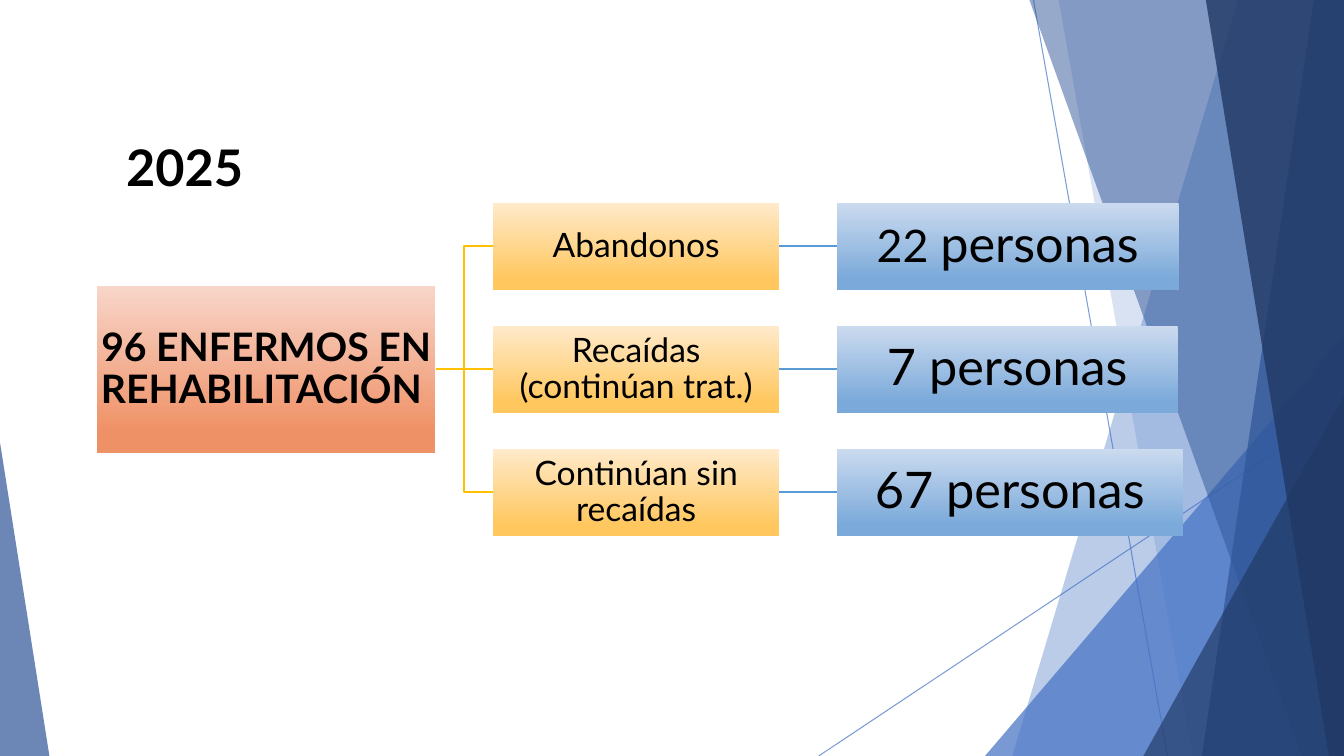
import pptx
import pptx.dml.color
import pptx.enum.dml
import pptx.enum.shapes
import pptx.enum.text
import pptx.oxml
import pptx.oxml.ns
import pptx.util

Inches = pptx.util.Inches
Pt = pptx.util.Pt
SHAPES = pptx.enum.shapes.MSO_SHAPE
FONT = "Lato"
WIDTH, HEIGHT = 13.33, 7.5

TITLE = "2025"
TOTAL = "96 ENFERMOS EN REHABILITACIÓN "
# Outcome, text runs of the count with their sizes, width of the count box
OUTCOMES = [
    ("Abandonos", [("22 ", 32), ("personas", 36)], 3.39),
    ("Recaídas (continúan trat.)", [("7 personas", 36)], 3.38),
    ("Continúan sin recaídas", [("67 personas", 36)], 3.43),
]

ORANGE = ("F8D5C9", "EF9166")
YELLOW = ("FFEACB", "FFC75E")
BLUE = ("CCDBEF", "7AA9DA")
BRANCH_LINE, COUNT_LINE = "FFC000", "5B9BD5"

# Rays: start, end
RAYS = [((10.25, 0), (11.58, HEIGHT)), ((WIDTH, 4.03), (8.12, HEIGHT))]
# Bands reaching the right edge: top left x, bottom left x, colour, opacity
# Triangles: left, top, width, height, apex, colour, opacity
DECORATION = [
    ("band", (12.28, 10.04), "4472C4", 36),
    ("band", (10.5, 11.83), "4472C4", 20),
    ("triangle", (9.77, 3.33, 3.56, 4.17, 1), "4472C4", 72),
    ("band", (10.21, 12.91), "2F5597", 50),
    ("band", (13.03, 11.92), "2F5597", 70),
    ("band", (11.96, 13.18), "203864", 80),
    ("triangle", (11.34, 3.93, 1.99, 3.57, 1), "203864", 66),
    ("triangle", (0, 4.39, 0.49, 3.11, 0), "2F5597", 70),
]

TOTAL_LEFT, TOTAL_TOP, TOTAL_WIDTH, TOTAL_HEIGHT = 0.96, 2.84, 3.36, 1.65
OUTCOME_WIDTH, ROW_HEIGHT = 2.84, 0.87
GAP = 0.57
TOTAL_RIGHT = TOTAL_LEFT + TOTAL_WIDTH
OUTCOME_LEFT = TOTAL_RIGHT + GAP
OUTCOME_RIGHT = OUTCOME_LEFT + OUTCOME_WIDTH
COUNT_LEFT = OUTCOME_RIGHT + GAP
CENTRE = TOTAL_TOP + TOTAL_HEIGHT / 2
ROW_PITCH = 1.22


def colour(hex_string):
    return pptx.dml.color.RGBColor.from_string(hex_string)


def set_opacity(fill_format, percent):
    for node in fill_format.iter(pptx.oxml.ns.qn("a:srgbClr")):
        alpha = pptx.oxml.parse_xml(
            f'<a:alpha {pptx.oxml.ns.nsdecls("a")} val="{percent * 1000}"/>')
        node.append(alpha)


def add_line(slide, start, end, line_colour, width):
    line = slide.shapes.add_connector(
        pptx.enum.shapes.MSO_CONNECTOR.STRAIGHT,
        *(Inches(value) for value in (*start, *end)))
    line.line.color.rgb = colour(line_colour)
    line.line.width = Pt(width)
    properties = line._element.spPr
    properties.append(pptx.oxml.parse_xml(
        f'<a:effectLst {pptx.oxml.ns.nsdecls("a")}/>'))
    return line


def add_outline(slide, points, closed):
    corners = [(Inches(x), Inches(y)) for x, y in points]
    builder = slide.shapes.build_freeform(*corners[0], scale=1.0)
    builder.add_line_segments(corners[1:], close=closed)
    shape = builder.convert_to_shape()
    shape.shadow.inherit = False
    return shape


def add_decoration(slide):
    for start, end in RAYS:
        ray = add_line(slide, start, end, "4472C4", 0.75)
        set_opacity(ray._element.spPr, 70)
    for kind, geometry, fill_colour, opacity in DECORATION:
        if kind == "band":
            top_x, bottom_x = geometry
            shape = add_outline(slide, [(top_x, 0), (WIDTH, 0), (WIDTH, HEIGHT),
                                        (bottom_x, HEIGHT)], True)
        else:
            *box, apex = geometry
            shape = slide.shapes.add_shape(
                SHAPES.ISOSCELES_TRIANGLE, *(Inches(value) for value in box))
            shape.adjustments[0] = apex
            shape.shadow.inherit = False
        shape.fill.solid()
        shape.fill.fore_color.rgb = colour(fill_colour)
        shape.line.fill.background()
        set_opacity(shape._element.spPr, opacity)


def add_runs(paragraph, runs, bold=False):
    for text, size in runs:
        run = paragraph.add_run()
        run.text = text
        formats = {"name": FONT, "size": Pt(size), "bold": bold}
        for name, value in formats.items():
            setattr(run.font, name, value)
        run.font.color.rgb = colour("000000")


def add_box(slide, box, gradient, runs, bold=False):
    shape = slide.shapes.add_shape(SHAPES.RECTANGLE, *(Inches(v) for v in box))
    shape.shadow.inherit = False
    shape.line.fill.background()
    shape.fill.gradient()
    shape.fill.gradient_angle = 270
    for stop, stop_colour, position in zip(
            shape.fill.gradient_stops, gradient, (0, 0.88)):
        stop.color.rgb = colour(stop_colour)
        stop.position = position
    frame = shape.text_frame
    frame.word_wrap = True
    frame.vertical_anchor = pptx.enum.text.MSO_ANCHOR.MIDDLE
    for side in ("left", "top", "right", "bottom"):
        setattr(frame, f"margin_{side}", Inches(0.02))
    paragraph = frame.paragraphs[0]
    paragraph.alignment = pptx.enum.text.PP_ALIGN.CENTER
    paragraph.line_spacing = 0.9
    add_runs(paragraph, runs, bold)


def add_tree(slide):
    middle_x = TOTAL_RIGHT + GAP / 2
    for index, (outcome, count, count_width) in enumerate(OUTCOMES):
        y = CENTRE + (index - 1) * ROW_PITCH
        top = y - ROW_HEIGHT / 2
        add_line(slide, (OUTCOME_RIGHT, y), (COUNT_LEFT, y), COUNT_LINE, 1.5)
        if y == CENTRE:
            add_line(slide, (TOTAL_RIGHT, y), (OUTCOME_LEFT, y), BRANCH_LINE, 1.5)
        else:
            branch = add_outline(slide, [(TOTAL_RIGHT, CENTRE), (middle_x, CENTRE),
                                         (middle_x, y), (OUTCOME_LEFT, y)], False)
            branch.fill.background()
            branch.line.color.rgb = colour(BRANCH_LINE)
            branch.line.width = Pt(1.5)
        add_box(slide, (OUTCOME_LEFT, top, OUTCOME_WIDTH, ROW_HEIGHT),
                YELLOW, [(outcome, 24)])
        add_box(slide, (COUNT_LEFT, top, count_width, ROW_HEIGHT), BLUE, count)
    add_box(slide, (TOTAL_LEFT, TOTAL_TOP, TOTAL_WIDTH, TOTAL_HEIGHT),
            ORANGE, [(TOTAL, 28)], bold=True)


def add_title(slide):
    title = slide.shapes.title
    box = {"left": 1.15, "top": 1.3, "width": 1.47, "height": 0.71}
    for name, value in box.items():
        setattr(title, name, Inches(value))
    frame = title.text_frame
    frame.word_wrap = True
    frame.auto_size = pptx.enum.text.MSO_AUTO_SIZE.NONE
    frame.vertical_anchor = pptx.enum.text.MSO_ANCHOR.TOP
    paragraph = frame.paragraphs[0]
    paragraph.alignment = pptx.enum.text.PP_ALIGN.LEFT
    add_runs(paragraph, [(TITLE, 36)], bold=True)


def main():
    presentation = pptx.Presentation()
    presentation.slide_width = Inches(WIDTH)
    presentation.slide_height = Inches(HEIGHT)
    slide = presentation.slides.add_slide(presentation.slide_layouts[5])
    add_decoration(slide)
    add_tree(slide)
    add_title(slide)
    presentation.save("out.pptx")


if __name__ == "__main__":
    main()
